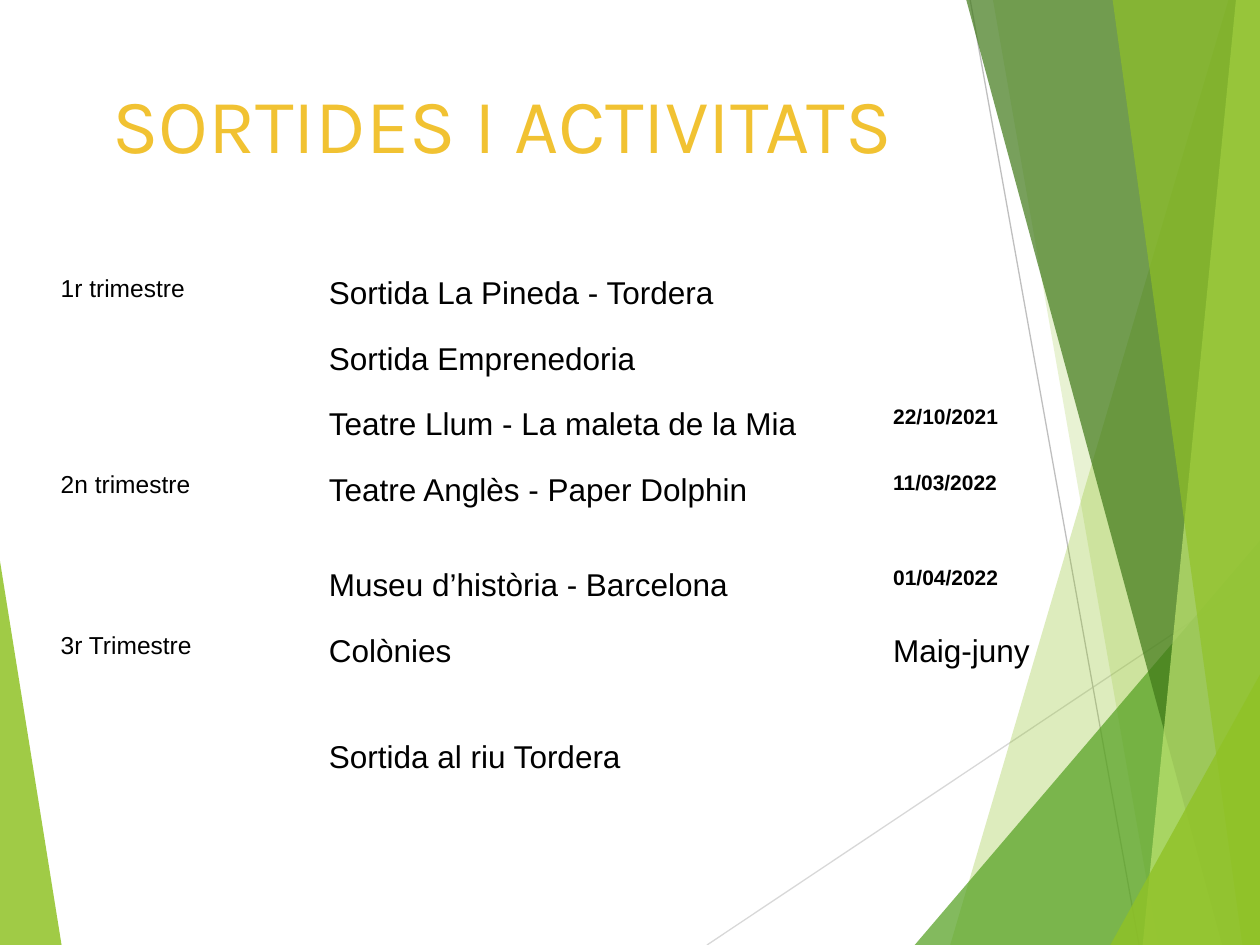
import pptx
import pptx.dml.color
import pptx.enum.shapes
import pptx.oxml.ns
import pptx.util
from lxml import etree

Pt = pptx.util.Pt
qn = pptx.oxml.ns.qn

COLORS = {
    "lime": "90C226",
    "green": "54A021",
    "forest": "3F7818",
    "pale": "BFE471",
    "light_gray": "D8D8D8",
    "gray": "BFBFBF",
    "title": "F1C232",
    "text": "000000",
}
NO_TABLE_STYLE = "{2D5ABB26-0587-4C30-8999-92F81FD0307C}"


def rgb(name):
    return pptx.dml.color.RGBColor.from_string(COLORS[name])


def style_run(run, font, size, color, bold=False):
    run.font.name = font
    run.font.size = Pt(size)
    run.font.color.rgb = rgb(color)
    run.font.bold = bold


def add_facet(slide, box, corners, color, opacity):
    left, top, _, _ = box
    points = [(Pt(left + x), Pt(top + y)) for x, y in corners]
    builder = slide.shapes.build_freeform(*points[0], scale=1.0)
    builder.add_line_segments(points[1:], close=True)
    facet = builder.convert_to_shape()
    facet.shadow.inherit = False
    facet.line.fill.background()
    facet.fill.solid()
    facet.fill.fore_color.rgb = rgb(color)
    fill_color = facet._element.spPr.find(qn("a:solidFill"))[0]
    etree.SubElement(fill_color, qn("a:alpha"), val=str(opacity * 1000))


def add_ray(slide, box, start, end, color):
    left, top, _, _ = box
    ray = slide.shapes.add_connector(
        pptx.enum.shapes.MSO_CONNECTOR.STRAIGHT,
        Pt(left + start[0]), Pt(top + start[1]),
        Pt(left + end[0]), Pt(top + end[1]))
    ray.line.color.rgb = rgb(color)
    ray.line.width = Pt(0.75)
    etree.SubElement(ray._element.spPr, qn("a:effectLst"))


def add_facets(slide, box):
    _, _, right, bottom = box
    add_facet(slide, box, [(0, 320.5), (35.2, bottom), (0, bottom)], "lime", 85)
    add_ray(slide, box, (404, bottom), (right, 329), "light_gray")
    add_ray(slide, box, (554.4, 0), (650.9, bottom), "gray")

    facets = [
        (702, 543, 0, "lime", 30),
        (567.4, 661.7, 0, "lime", 20),
        (right, 522.7, 309, "green", 72),
        (552.2, 698.4, 0, "forest", 70),
        (706.3, 653, 0, "pale", 70),
        (635.8, 710, 0, "lime", 65),
        (right, 634.5, 385.5, "lime", 80),
    ]
    for top_x, bottom_x, top_y, color, opacity in facets:
        corners = [(top_x, top_y), (bottom_x, bottom), (right, bottom)]
        if top_x < right:
            corners.append((right, top_y))
        add_facet(slide, box, corners, color, opacity)


def add_title(slide, box):
    title = slide.shapes.add_textbox(*map(Pt, box))
    frame = title.text_frame
    frame.word_wrap = True
    frame.text = "SORTIDES I ACTIVITATS"
    paragraph = frame.paragraphs[0]
    paragraph.line_spacing = 1.02
    style_run(paragraph.runs[0], "Karla", 44, "title")


def add_schedule(slide, box):
    outings = [
        ("1r trimestre", "Sortida La Pineda - Tordera", "", 37.5),
        ("", "Sortida Emprenedoria", "", 37.5),
        ("", "Teatre Llum - La maleta de la Mia", "22/10/2021", 37.5),
        ("2n trimestre", "Teatre Anglès - Paper Dolphin", "11/03/2022", 54.5),
        ("", "Museu d’història - Barcelona", "01/04/2022", 37.5),
        ("3r Trimestre", "Colònies", "Maig-juny", 60.5),
        ("", "Sortida al riu Tordera", "", 37.5),
    ]
    column_widths = [136, 13.5, 291.5, 31, 106]
    schedule = slide.shapes.add_table(
        len(outings), len(column_widths), *map(Pt, box)).table
    schedule.first_row = False
    schedule.horz_banding = False
    schedule._tbl.tblPr.find(qn("a:tableStyleId")).text = NO_TABLE_STYLE
    for column, width in zip(schedule.columns, column_widths):
        column.width = Pt(width)

    for row, (term, outing, date, height) in zip(schedule.rows, outings):
        row.height = Pt(height)
        is_day = "/" in date
        entries = {
            0: (term, 14, False),
            2: (outing, 18, False),
            4: (date, 12 if is_day else 18, is_day),
        }
        for index, cell in enumerate(row.cells):
            cell.fill.background()
            cell.margin_left = cell.margin_right = cell.margin_top = Pt(7.2)
            cell.margin_bottom = Pt(5)
            words, size, bold = entries.get(index, ("", 14, False))
            if words:
                cell.text_frame.text = words
                paragraph = cell.text_frame.paragraphs[0]
                paragraph.line_spacing = 1.15
                style_run(paragraph.runs[0], "Arial", size, "text", bold)


def main():
    presentation = pptx.Presentation()
    presentation.slide_width = Pt(720)
    presentation.slide_height = Pt(540)
    slide = presentation.slides.add_slide(presentation.slide_layouts[6])
    add_facets(slide, (0, 0, 720, 540))
    add_title(slide, (57, 39, 612, 62))
    add_schedule(slide, (27.5, 147.5, 578, 302.5))
    presentation.save("out.pptx")


if __name__ == "__main__":
    main()
